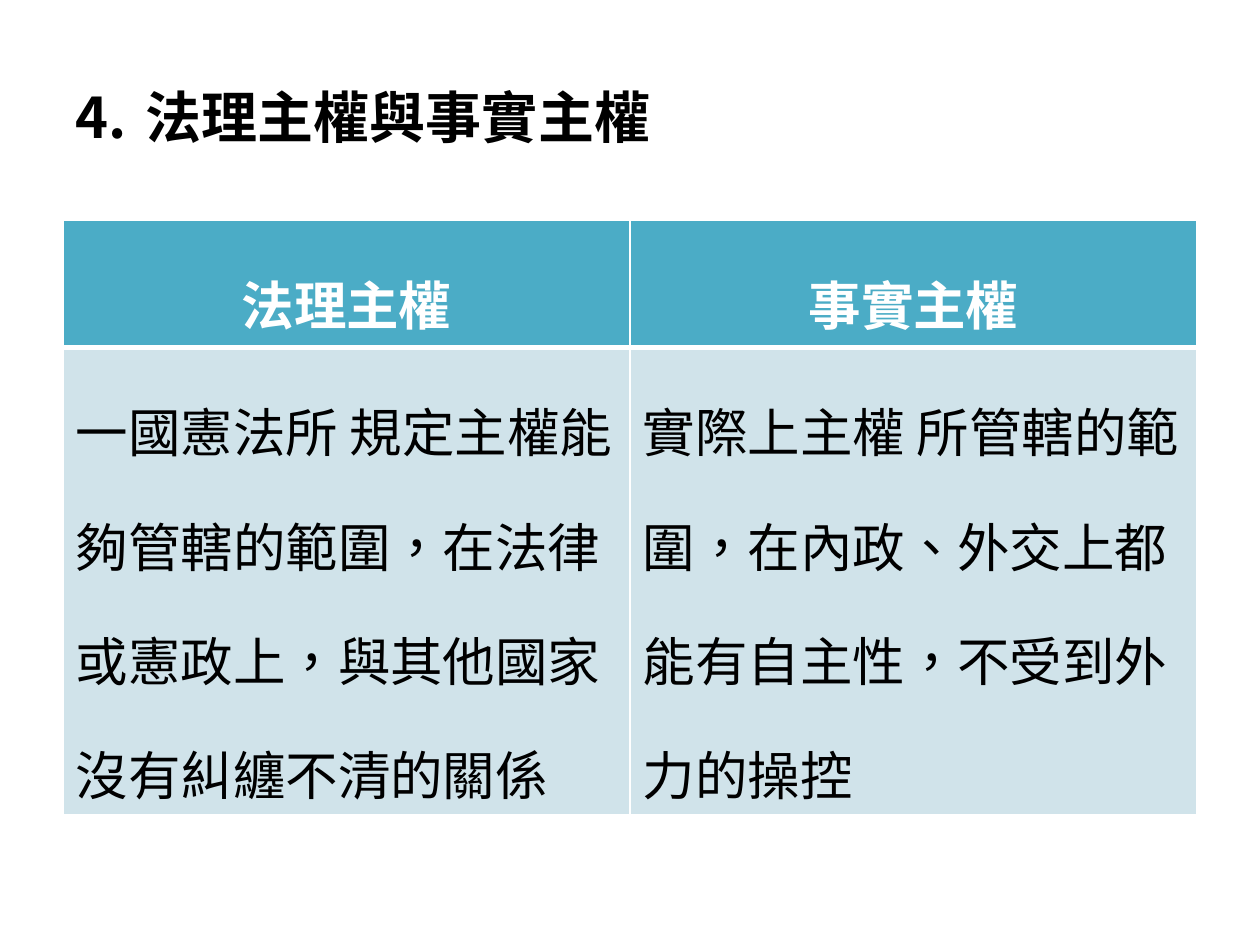
from lxml import etree
from pptx import Presentation
from pptx.dml.color import RGBColor
from pptx.enum.lang import MSO_LANGUAGE_ID
from pptx.enum.text import MSO_ANCHOR, PP_ALIGN
from pptx.oxml.ns import qn
from pptx.util import Inches, Pt

CENTER, LEFT = PP_ALIGN.CENTER, PP_ALIGN.LEFT
MIDDLE = MSO_ANCHOR.MIDDLE
TRADITIONAL_CHINESE = MSO_LANGUAGE_ID.TRADITIONAL_CHINESE
FONT = "Noto Sans CJK SC"
BLACK, WHITE = "000000", "FFFFFF"
HEADER_FILL, BODY_FILL = "4BACC6", "D0E3EA"


def rgb(value):
    return RGBColor.from_string(value)


def style_text(paragraph, size, color, bold):
    for run in paragraph.runs:
        run.font.size = Pt(size)
        run.font.name = FONT
        run.font.bold = bold
        run.font.color.rgb = rgb(color)
        run.font.language_id = TRADITIONAL_CHINESE
        # Chinese characters take the East Asian typeface
        etree.SubElement(run.font._element, qn("a:ea"), typeface=FONT)


prs = Presentation()
prs.slide_width, prs.slide_height = Inches(10), Inches(7.5)
slide = prs.slides.add_slide(prs.slide_layouts[6])

# Numbered heading
heading = slide.shapes.add_textbox(Inches(0.5), Inches(0.3), Inches(9), Inches(1.25))
heading.text_frame.word_wrap = True
heading.text_frame.vertical_anchor = MIDDLE
heading.text_frame.text = "法理主權與事實主權"
heading_line = heading.text_frame.paragraphs[0]
style_text(heading_line, 32, BLACK, True)
numbering = heading_line._p.get_or_add_pPr()
numbering.set("marL", str(Inches(0.56)))
numbering.set("indent", str(-Inches(0.56)))
etree.SubElement(numbering, qn("a:buFont"), typeface="+mj-lt")
etree.SubElement(numbering, qn("a:buAutoNum"), type="arabicPeriod", startAt="4")

# Comparison table, rows tall enough for one and four lines
rows = [
    ("法理主權", "事實主權"),
    ("一國憲法所 規定主權能夠管轄的範圍，在法律或憲政上，與其他國家沒有糾纏不清的關係",
     "實際上主權 所管轄的範圍，在內政、外交上都能有自主性，不受到外力的操控"),
]
row_heights = [Inches(1.01), Inches(3.71)]
comparison = slide.shapes.add_table(
    2, 2, Inches(0.5), Inches(1.75), Inches(9), sum(row_heights)).table

for row_index, texts in enumerate(rows):
    is_header = row_index == 0
    comparison.rows[row_index].height = row_heights[row_index]
    for column_index, text in enumerate(texts):
        cell = comparison.cell(row_index, column_index)
        cell.text = text
        cell.fill.solid()
        cell.fill.fore_color.rgb = rgb(HEADER_FILL if is_header else BODY_FILL)
        paragraph = cell.text_frame.paragraphs[0]
        paragraph.alignment = CENTER if is_header else LEFT
        paragraph.line_spacing = 1.5
        style_text(paragraph, 30, WHITE if is_header else BLACK, is_header)

        # White borders, thicker between header and body
        divider = "lnB" if is_header else "lnT"
        cell_properties = cell._tc.get_or_add_tcPr()
        for position, side in enumerate(("lnL", "lnR", "lnT", "lnB")):
            border = etree.Element(qn(f"a:{side}"), w=str(Pt(3 if side == divider else 1)))
            border_fill = etree.SubElement(border, qn("a:solidFill"))
            etree.SubElement(border_fill, qn("a:srgbClr"), val=WHITE)
            cell_properties.insert(position, border)

prs.save("out.pptx")
